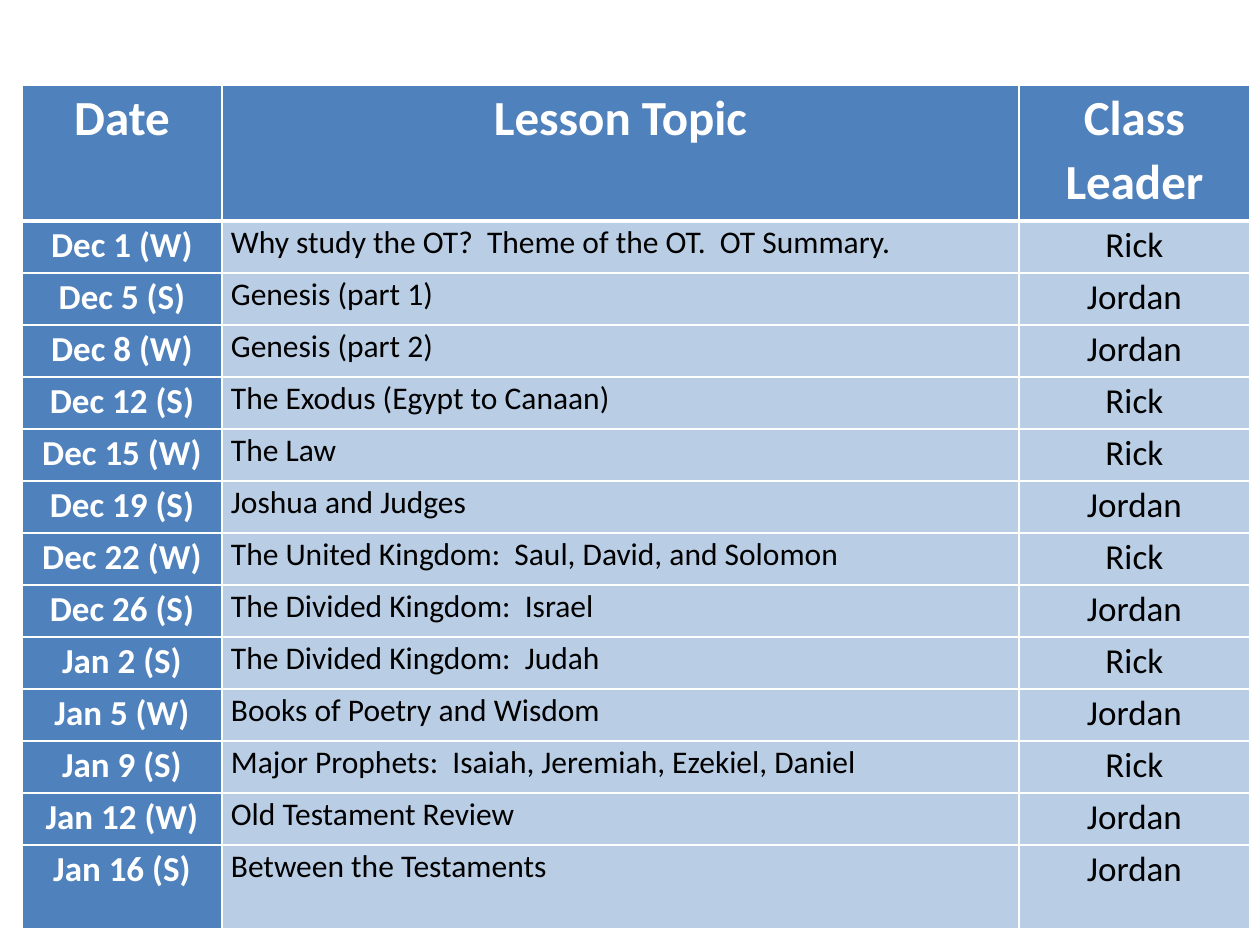
import pptx
import pptx.dml.color
import pptx.enum.text
import pptx.oxml.ns
import pptx.util
import lxml.etree

PX = 914400 // 126
WHITE = pptx.dml.color.RGBColor(0xFF, 0xFF, 0xFF)
BLACK = pptx.dml.color.RGBColor(0x00, 0x00, 0x00)
BLUE = pptx.dml.color.RGBColor(0x4F, 0x81, 0xBD)
PALE_BLUE = pptx.dml.color.RGBColor(0xB9, 0xCD, 0xE5)

COLUMN_WIDTHS = [200, 797, 231]
HEADER_HEIGHT, LESSON_HEIGHT, LAST_HEIGHT = 136, 52, 84

SCHEDULE = [
    ("Date", "Lesson Topic", "Class Leader"),
    ("Dec 1 (W)", "Why study the OT?  Theme of the OT.  OT Summary.", "Rick"),
    ("Dec 5 (S)", "Genesis (part 1)", "Jordan"),
    ("Dec 8 (W)", "Genesis (part 2)", "Jordan"),
    ("Dec 12 (S)", "The Exodus (Egypt to Canaan)", "Rick"),
    ("Dec 15 (W)", "The Law", "Rick"),
    ("Dec 19 (S)", "Joshua and Judges", "Jordan"),
    ("Dec 22 (W)", "The United Kingdom:  Saul, David, and Solomon", "Rick"),
    ("Dec 26 (S)", "The Divided Kingdom:  Israel", "Jordan"),
    ("Jan 2 (S)", "The Divided Kingdom:  Judah", "Rick"),
    ("Jan 5 (W)", "Books of Poetry and Wisdom", "Jordan"),
    ("Jan 9 (S)", "Major Prophets:  Isaiah, Jeremiah, Ezekiel, Daniel", "Rick"),
    ("Jan 12 (W)", "Old Testament Review", "Jordan"),
    ("Jan 16 (S)", "Between the Testaments", "Jordan"),
]


def set_borders(cell, widths):
    """Draw white cell borders; widths maps each side to points."""
    qn = pptx.oxml.ns.qn
    properties = cell._tc.get_or_add_tcPr()
    for position, side in enumerate("LRTB"):
        line = lxml.etree.Element(qn(f"a:ln{side}"), w=str(pptx.util.Pt(widths[side])))
        fill = lxml.etree.SubElement(line, qn("a:solidFill"))
        lxml.etree.SubElement(fill, qn("a:srgbClr"), val=str(WHITE))
        properties.insert(position, line)


presentation = pptx.Presentation()
presentation.slide_width = pptx.util.Inches(10)
presentation.slide_height = pptx.util.Inches(7.5)
slide = presentation.slides.add_slide(presentation.slide_layouts[6])

# Schedule table
row_heights = [HEADER_HEIGHT] + [LESSON_HEIGHT] * (len(SCHEDULE) - 2) + [LAST_HEIGHT]
table = slide.shapes.add_table(
    len(SCHEDULE), len(COLUMN_WIDTHS), 22 * PX, 85 * PX,
    sum(COLUMN_WIDTHS) * PX, sum(row_heights) * PX,
).table
table.first_col = True
table.horz_banding = False
for column, width in zip(table.columns, COLUMN_WIDTHS):
    column.width = width * PX
for row, height in zip(table.rows, row_heights):
    row.height = height * PX

# Cell text and formatting
for row_index, entries in enumerate(SCHEDULE):
    for column_index, text in enumerate(entries):
        is_header = row_index == 0
        is_topic = column_index == 1 and not is_header
        is_heading = is_header or column_index == 0

        cell = table.cell(row_index, column_index)
        cell.margin_left = cell.margin_right = 9 * PX
        cell.margin_top = cell.margin_bottom = 0
        cell.fill.solid()
        cell.fill.fore_color.rgb = BLUE if is_heading else PALE_BLUE
        set_borders(cell, {
            "L": 1, "R": 1,
            "T": 3 if row_index == 1 else 1,
            "B": 3 if is_header else 1,
        })

        cell.text_frame.text = text
        paragraph = cell.text_frame.paragraphs[0]
        paragraph.line_spacing = 1.07
        alignment = pptx.enum.text.PP_ALIGN
        paragraph.alignment = alignment.LEFT if is_topic else alignment.CENTER
        font = paragraph.runs[0].font
        font.name = "Calibri"
        font.size = pptx.util.Pt(28 if is_header else 18 if is_topic else 20)
        font.bold = is_heading
        font.color.rgb = WHITE if is_heading else BLACK

presentation.save("out.pptx")
